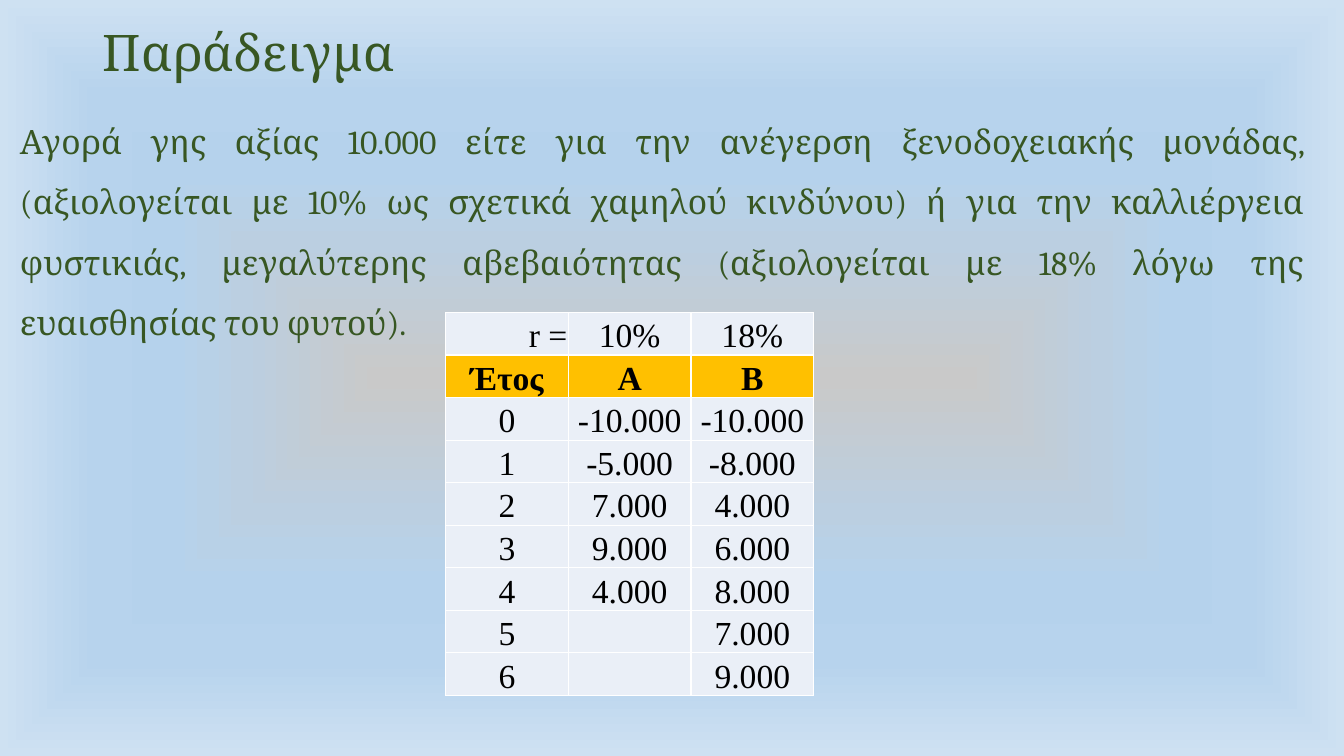
from lxml import etree
from pptx import Presentation
from pptx.dml.color import RGBColor
from pptx.enum import text
from pptx.oxml import parse_xml
from pptx.oxml.ns import nsdecls, qn
from pptx.util import Inches, Pt

GREEN, BLACK, WHITE = "385723", "000000", "FFFFFF"
PALE, GOLD = "EAEFF7", "FFC000"
AL = text.PP_ALIGN


def color(code):
    return RGBColor.from_string(code)


def write(para, words, face, size, ink, bold=False, **form):
    run = para.add_run()
    run.text = words
    for key, val in dict(name=face, size=Pt(size), bold=bold).items():
        setattr(run.font, key, val)
    run.font.color.rgb = color(ink)
    for key, val in form.items():
        setattr(para, key, val)


prs = Presentation()
prs.slide_width, prs.slide_height = Inches(13.33), Inches(7.5)
slide = prs.slides.add_slide(prs.slide_layouts[5])

# Background: gradient that spreads from the centre
stops = [(0, "C9C9C9"), (36, "BBCFE1"), (45, "B8D1E7"), (54, "B5D2EC"),
         (61, "B5D2EC"), (65, "B5D2EC"), (75, "B7D3ED"), (100, "CEE1F2")]
marks = "".join(f'<a:gs pos="{pos * 1000}"><a:srgbClr val="{code}"/></a:gs>'
                for pos, code in stops)
slide.element.cSld.insert(0, parse_xml(
    f'<p:bg {nsdecls("p", "a")}><p:bgPr><a:gradFill rotWithShape="1">'
    f'<a:gsLst>{marks}</a:gsLst><a:path path="shape">'
    '<a:fillToRect l="50000" t="50000" r="50000" b="50000"/></a:path>'
    '</a:gradFill><a:effectLst/></p:bgPr></p:bg>'))

# Title
title = slide.shapes.title
title.left, title.top = Inches(0.92), Inches(0)
title.width, title.height = Inches(11.5), Inches(1.1)
title.text_frame.vertical_anchor = text.MSO_ANCHOR.MIDDLE
write(title.text_frame.paragraphs[0], "Παράδειγμα", "Cambria", 36, GREEN,
      alignment=AL.LEFT, line_spacing=0.9)

# Body text
body = slide.shapes.add_textbox(Inches(0.1), Inches(0.95),
                                Inches(12.93), Inches(5.95))
body.text_frame.word_wrap = True
write(body.text_frame.paragraphs[0],
      "Αγορά γης αξίας 10.000 είτε για την ανέγερση ξενοδοχειακής μονάδας, "
      "(αξιολογείται με 10% ως σχετικά χαμηλού κινδύνου) ή για την "
      "καλλιέργεια φυστικιάς, μεγαλύτερης αβεβαιότητας (αξιολογείται με 18% "
      "λόγω της ευαισθησίας του φυτού).", "Cambria", 24, GREEN,
      alignment=AL.JUSTIFY, line_spacing=1.5, space_before=Pt(10))

# Cash flow table
rows = [("r =", "10%", "18%"),
        ("Έτος", "Α", "Β"),
        ("0", "-10.000", "-10.000"),
        ("1", "-5.000", "-8.000"),
        ("2", "7.000", "4.000"),
        ("3", "9.000", "6.000"),
        ("4", "4.000", "8.000"),
        ("5", "", "7.000"),
        ("6", "", "9.000")]
table = slide.shapes.add_table(len(rows), 3, Inches(4.42), Inches(3.1),
                               Inches(3.65), Inches(3.8)).table
inset = dict(margin_left=Inches(0.01), margin_right=Inches(0.01),
             margin_top=Inches(0.01), margin_bottom=0,
             vertical_anchor=text.MSO_ANCHOR.BOTTOM)
for r, row in enumerate(rows):
    for c, words in enumerate(row):
        cell = table.cell(r, c)
        for key, val in inset.items():
            setattr(cell, key, val)
        if words:
            write(cell.text_frame.paragraphs[0], words, "Times New Roman", 24,
                  BLACK, bold=r == 1,
                  alignment=AL.RIGHT if r == c == 0 else AL.CENTER)
        # Borders come before the fill in the cell properties
        props = cell._tc.get_or_add_tcPr()
        for side in ("a:lnL", "a:lnR", "a:lnT", "a:lnB"):
            line = etree.SubElement(props, qn(side), w=str(Pt(1)))
            fill = etree.SubElement(line, qn("a:solidFill"))
            etree.SubElement(fill, qn("a:srgbClr"), val=WHITE)
        cell.fill.solid()
        cell.fill.fore_color.rgb = color(GOLD if r == 1 else PALE)

prs.save("out.pptx")
